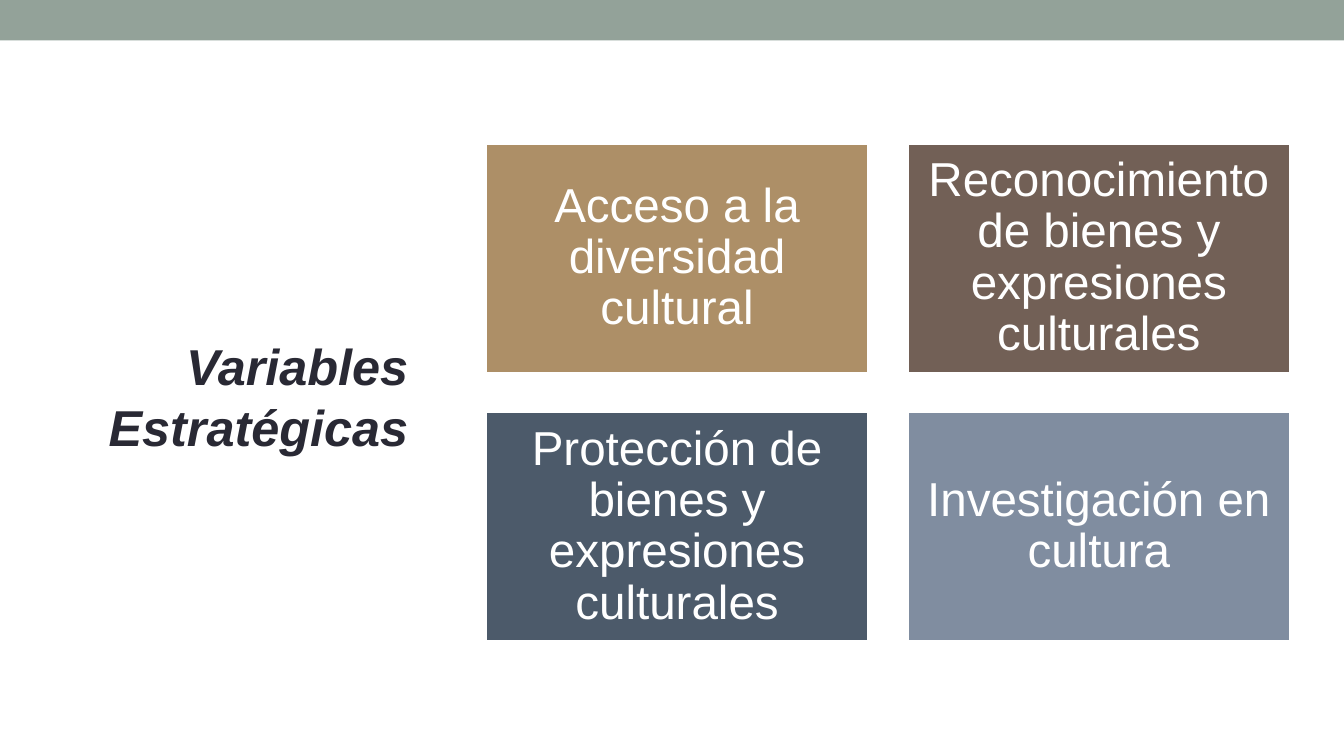
from pptx import Presentation
from pptx.dml.color import RGBColor
from pptx.enum import shapes, text
from pptx.util import Cm, Pt

TITLE = "Variables Estratégicas"
VARIABLES = [
    ("Acceso a la diversidad cultural", "tan"),
    ("Reconocimiento de bienes y expresiones culturales", "brown"),
    ("Protección de bienes y expresiones culturales", "slate"),
    ("Investigación en cultura", "blue"),
]
COLORS = {
    "band": "93A299",
    "tan": "AD8F67",
    "brown": "726056",
    "slate": "4C5A6A",
    "blue": "808DA0",
    "white": "FFFFFF",
    "dark": "292934",
}
FONT = "Arial"
SLIDE_W, SLIDE_H = 33.87, 19.05
BAND_H = 1.02
GRID_LEFT, GRID_TOP = 12.24, 3.61
CARD_W, CARD_H = 9.65, 5.79
GAP = 0.98
INSET = 0.36
COLUMNS = 2


def color(name):
    return RGBColor.from_string(COLORS[name])


def add_rect(slide, left, top, width, height, fill):
    sp = slide.shapes.add_shape(
        shapes.MSO_SHAPE.RECTANGLE, Cm(left), Cm(top), Cm(width), Cm(height))
    sp.shadow.inherit = False
    sp.fill.solid()
    sp.fill.fore_color.rgb = color(fill)
    sp.line.fill.background()
    return sp


def write(tf, words, size, ink, align):
    tf.word_wrap = True
    p = tf.paragraphs[0]
    p.alignment = align
    r = p.add_run()
    r.text = words
    r.font.name = FONT
    r.font.size = Pt(size)
    r.font.color.rgb = color(ink)
    return p, r


def add_card(slide, index, words, fill):
    row, col = divmod(index, COLUMNS)
    sp = add_rect(slide, GRID_LEFT + col * (CARD_W + GAP),
                  GRID_TOP + row * (CARD_H + GAP), CARD_W, CARD_H, fill)
    sp.line.color.rgb = color("white")
    sp.line.width = Pt(2.08)
    tf = sp.text_frame
    tf.margin_left = tf.margin_right = Cm(INSET)
    tf.margin_top = tf.margin_bottom = Cm(INSET)
    tf.vertical_anchor = text.MSO_ANCHOR.MIDDLE
    p, r = write(tf, words, 34, "white", text.PP_ALIGN.CENTER)
    p.line_spacing = 0.9


def add_title(slide):
    sp = slide.shapes.add_textbox(Cm(2.16), Cm(8.33), Cm(8.38), Cm(3.33))
    p, r = write(sp.text_frame, TITLE, 36, "dark", text.PP_ALIGN.RIGHT)
    r.font.bold = True
    r.font.italic = True
    sp.text_frame.auto_size = text.MSO_AUTO_SIZE.SHAPE_TO_FIT_TEXT


def main():
    prs = Presentation()
    prs.slide_width, prs.slide_height = Cm(SLIDE_W), Cm(SLIDE_H)
    slide = prs.slides.add_slide(prs.slide_layouts[6])
    add_rect(slide, 0, 0, SLIDE_W, BAND_H, "band")
    for index, (words, fill) in enumerate(VARIABLES):
        add_card(slide, index, words, fill)
    add_title(slide)
    prs.save("out.pptx")


if __name__ == "__main__":
    main()
